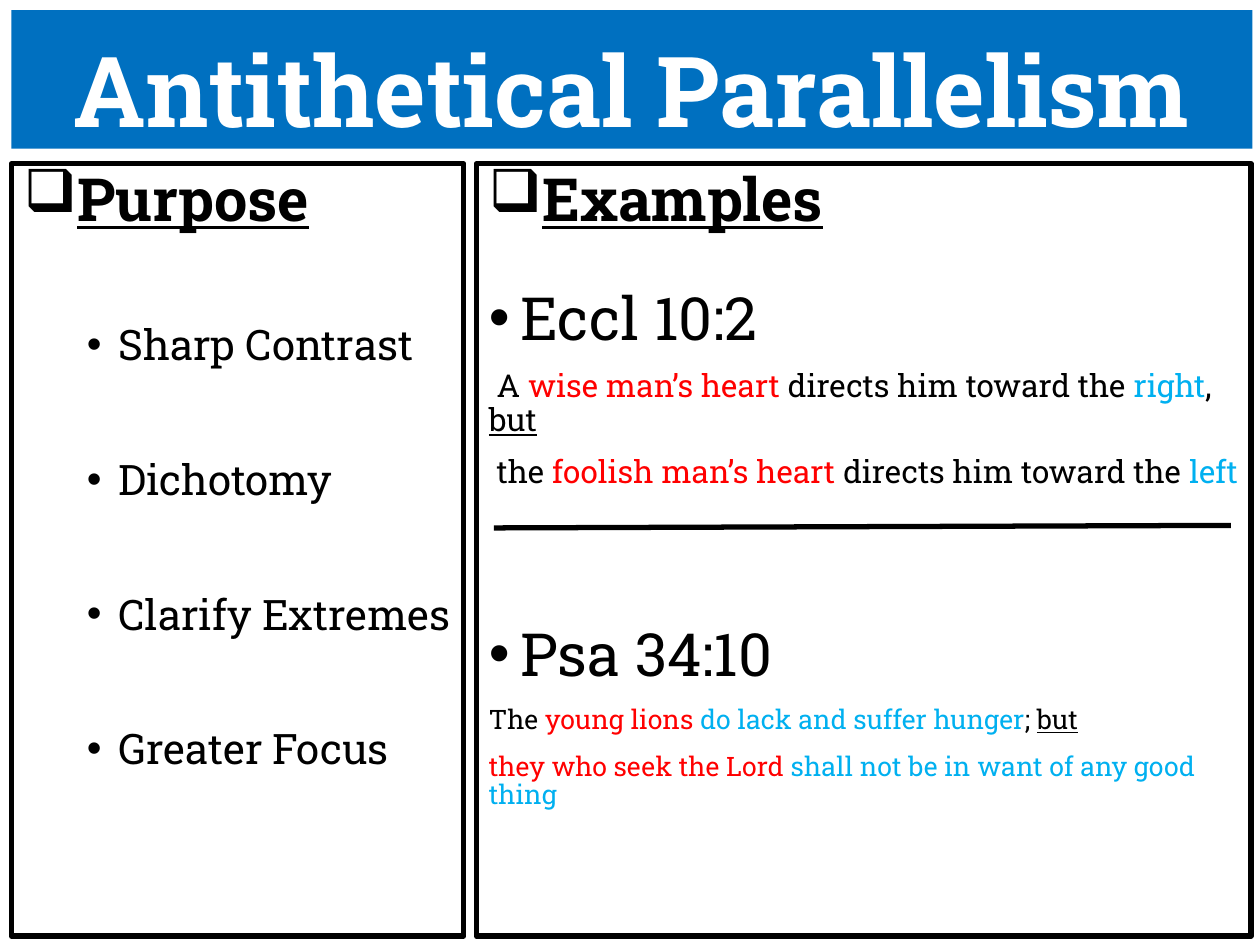
from dataclasses import dataclass

from lxml.etree import SubElement
from pptx import Presentation
from pptx.dml.color import RGBColor
from pptx.enum.shapes import MSO_CONNECTOR
from pptx.enum.text import MSO_ANCHOR, MSO_AUTO_SIZE, PP_ALIGN
from pptx.oxml.ns import qn
from pptx.util import Inches, Pt

FONT = "Roboto Slab"
BLACK, WHITE, BLUE = "000000", "FFFFFF", "0070C0"
RED, CYAN = "FF0000", "00B0F0"
BOX, DOT = "q", "•"  # "q" is the open box in Wingdings


@dataclass
class Piece:
    text: str
    color: str = BLACK
    underline: bool = False
    bold: bool = False


@dataclass
class Line:
    pieces: list[Piece]
    size: float
    bullet: str = ""
    level: int = 0
    spacing: float = 0.9
    before: float = 10


def rgb(color: str) -> RGBColor:
    return RGBColor.from_string(color)


def place(shape, left: float, top: float, width: float, height: float) -> None:
    shape.left, shape.top = Inches(left), Inches(top)
    shape.width, shape.height = Inches(width), Inches(height)


def set_bullet(paragraph, bullet: str, level: int) -> None:
    props = paragraph._p.get_or_add_pPr()
    hang = Inches(0.25) if bullet else 0
    props.set("marL", str(Inches(0.5 * level) + hang))
    props.set("indent", str(-hang))
    if bullet:
        face = SubElement(props, qn("a:buFont"))
        face.set("typeface", "Wingdings" if bullet == BOX else "Arial")
        if bullet == BOX:
            face.set("charset", "2")
        SubElement(props, qn("a:buChar")).set("char", bullet)
    else:
        SubElement(props, qn("a:buNone"))


def write_line(paragraph, line: Line) -> None:
    paragraph.level = line.level
    set_bullet(paragraph, line.bullet, line.level)
    paragraph.line_spacing = line.spacing
    paragraph.space_before = Pt(line.before)
    for piece in line.pieces:
        run = paragraph.add_run()
        run.text = piece.text
        run.font.name, run.font.size = FONT, Pt(line.size)
        run.font.bold, run.font.underline = piece.bold, piece.underline
        run.font.color.rgb = rgb(piece.color)


def fill_panel(panel, left: float, width: float, lines: list[Line]) -> None:
    place(panel, left, 1.3, width, 6.13)
    panel.line.color.rgb = rgb(BLACK)
    panel.line.width = Pt(3)
    frame = panel.text_frame
    frame.auto_size = MSO_AUTO_SIZE.NONE
    frame.word_wrap = True
    for index, line in enumerate(lines):
        paragraph = frame.add_paragraph() if index else frame.paragraphs[0]
        write_line(paragraph, line)


def heading(text: str) -> Line:
    return Line([Piece(text, underline=True, bold=True)], 34, BOX)


def reference(text: str, before: float) -> Line:
    return Line([Piece(text)], 34, DOT, before=before)


PURPOSES = ["Sharp Contrast", "Dichotomy", "Clarify Extremes", "Greater Focus"]

EXAMPLES = [
    heading("Examples"),
    reference("Eccl 10:2", before=31),
    Line([Piece(" A "), Piece("wise man’s heart ", RED),
          Piece("directs him toward the "), Piece("right", CYAN),
          Piece(", "), Piece("but", underline=True)], 18),
    Line([Piece(" the "), Piece("foolish man’s heart ", RED),
          Piece("directs him toward the "), Piece("left", CYAN)], 18),
    reference("Psa 34:10", before=77),
    Line([Piece("The "), Piece("young lions ", RED),
          Piece("do lack and suffer hunger", CYAN),
          Piece("; "), Piece("but", underline=True)], 15.3),
    Line([Piece("they who seek the Lord ", RED),
          Piece("shall not be in want of any good thing", CYAN)], 15.3),
]


def main() -> None:
    prs = Presentation()
    prs.slide_width, prs.slide_height = Inches(10), Inches(7.5)
    slide = prs.slides.add_slide(prs.slide_layouts[3])
    title, purpose, examples = slide.placeholders

    # Title banner
    place(title, 0.09, 0.08, 9.85, 1.1)
    title.fill.solid()
    title.fill.fore_color.rgb = rgb(BLUE)
    banner = title.text_frame
    banner.auto_size = MSO_AUTO_SIZE.NONE
    banner.vertical_anchor = MSO_ANCHOR.MIDDLE
    banner.text = "Antithetical Parallelism"
    words = banner.paragraphs[0]
    words.alignment = PP_ALIGN.CENTER
    words.line_spacing = 1.15
    font = words.runs[0].font
    font.name, font.size, font.bold = FONT, Pt(56), True
    font.color.rgb = rgb(WHITE)

    # Two panels
    purposes = [Line([Piece(text)], 24, DOT, level=1, spacing=2.5, before=5)
                for text in PURPOSES]
    fill_panel(purpose, 0.09, 3.59, [heading("Purpose"), *purposes])
    fill_panel(examples, 3.78, 6.15, EXAMPLES)

    # Rule between the two examples
    divider = slide.shapes.add_connector(
        MSO_CONNECTOR.STRAIGHT, Inches(3.92), Inches(4.19), Inches(9.77), Inches(4.17))
    divider.line.color.rgb = rgb(BLACK)
    divider.line.width = Pt(3)
    SubElement(divider._element.spPr, qn("a:effectLst"))

    prs.save("out.pptx")


if __name__ == "__main__":
    main()
